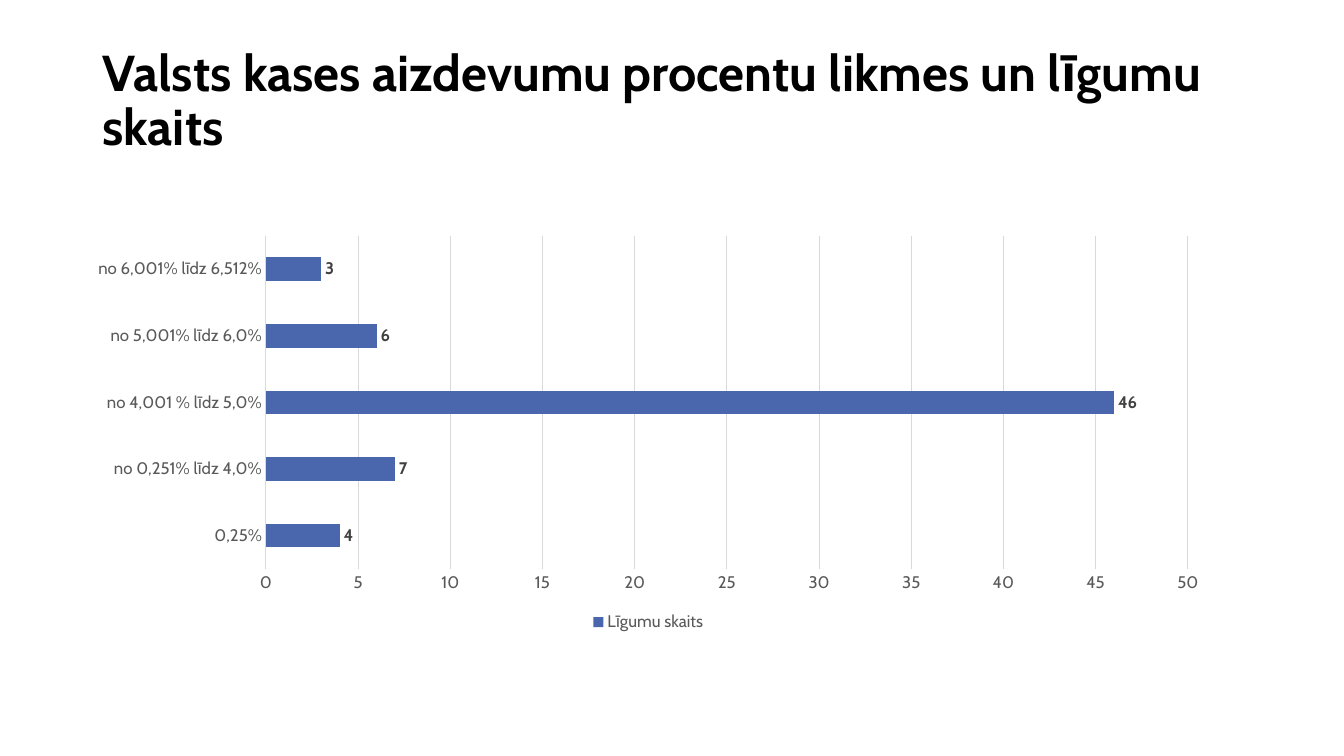
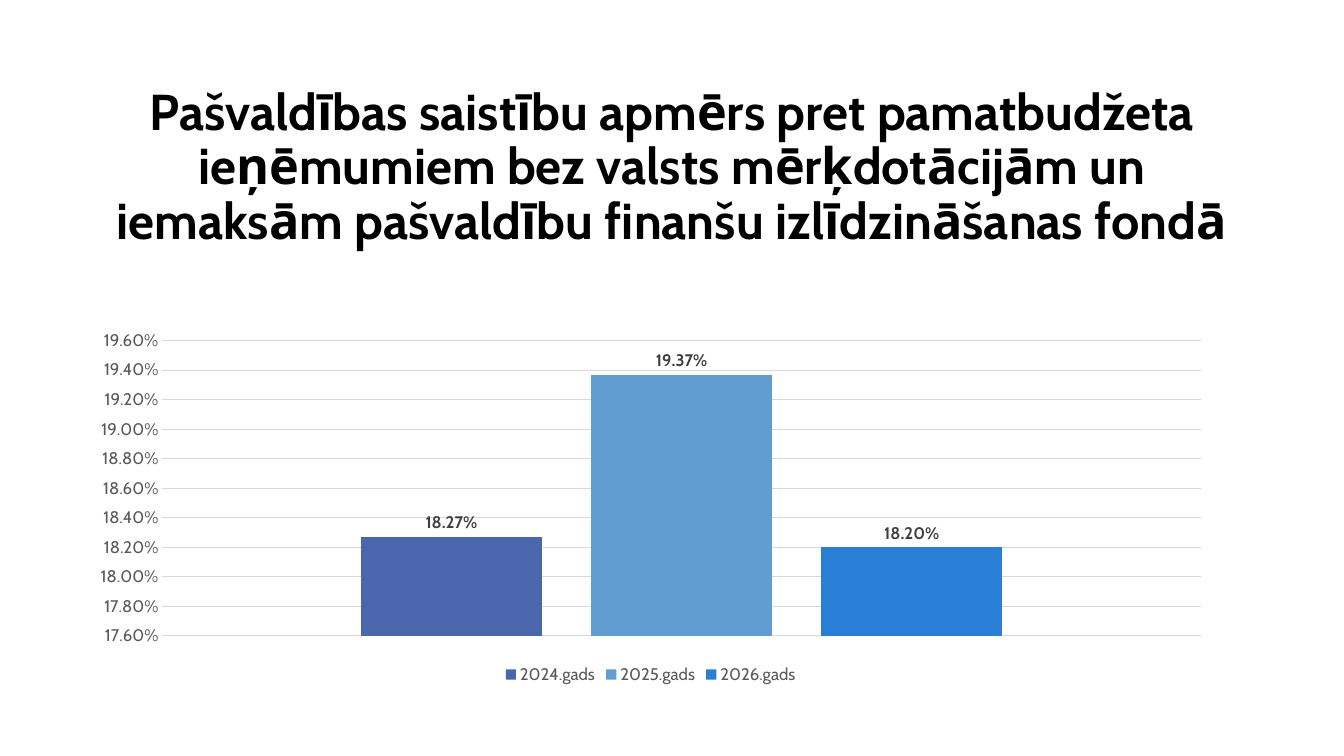
from pptx import Presentation
from pptx import util as u
from pptx.chart.data import CategoryChartData
from pptx.dml.color import RGBColor
from pptx.enum import chart as ch, text

FACE = "Cabin"
HUES = {"title": "000000", "axis": "595959", "label": "404040", "grid": "D9D9D9"}
BARS = ["4A66AC", "629DD1", "297FD5"]

PAGES = [
    {
        "title": "Valsts kases aizdevumu procentu likmes un līgumu skaits",
        "align": text.PP_ALIGN.LEFT,
        "tall": 3.12,
        "kind": ch.XL_CHART_TYPE.BAR_CLUSTERED,
        "box": (1.9, 5.74, 28.88, 10.29),
        "cats": ["0,25%", "no 0,251% līdz 4,0%", "no 4,001 % līdz 5,0%",
                 "no 5,001% līdz 6,0%", "no 6,001% līdz 6,512%"],
        "rows": {"Līgumu skaits": [4, 7, 46, 6, 3]},
        "gap": 182, "lap": 0, "form": "General",
        "scale": (0, 50, 5), "names": True,
    },
    {
        "title": "Pašvaldības saistību apmērs pret pamatbudžeta ieņēmumiem bez "
                 "valsts mērķdotācijām un iemaksām pašvaldību finanšu "
                 "izlīdzināšanas fondā",
        "align": text.PP_ALIGN.CENTER,
        "tall": 6.48,
        "kind": ch.XL_CHART_TYPE.COLUMN_CLUSTERED,
        "box": (1.96, 8.15, 28.88, 9.2),
        "cats": ["1"],
        "rows": {"2024.gads": [0.1827], "2025.gads": [0.1937], "2026.gads": [0.182]},
        "gap": 219, "lap": -27, "form": "0.00%",
        "scale": (0.176, 0.196, 0.002), "names": False,
    },
]


def style(font, size, hue, bold=False):
    font.name, font.size, font.bold = FACE, u.Pt(size), bold
    font.color.rgb = RGBColor.from_string(HUES[hue])


def rule(line):
    """Thin grey line, shared by the grid and the category axis."""
    line.width = u.Pt(0.75)
    line.color.rgb = RGBColor.from_string(HUES["grid"])


deck = Presentation()
deck.slide_width, deck.slide_height = u.Cm(33.87), u.Cm(19.05)

for page in PAGES:
    slide = deck.slides.add_slide(deck.slide_layouts[6])

    # Title
    box = slide.shapes.add_textbox(u.Cm(2.33), u.Cm(1.01), u.Cm(29.21), u.Cm(page["tall"]))
    frame = box.text_frame
    frame.word_wrap = True
    frame.vertical_anchor = text.MSO_ANCHOR.MIDDLE
    frame.text = page["title"]
    para = frame.paragraphs[0]
    para.alignment, para.line_spacing = page["align"], 0.9
    style(para.runs[0].font, 36, "title", True)

    # Chart
    data = CategoryChartData(number_format=page["form"])
    data.categories = page["cats"]
    for name, vals in page["rows"].items():
        data.add_series(name, vals)
    chart = slide.shapes.add_chart(page["kind"], *map(u.Cm, page["box"]), data).chart
    style(chart.font, 10, "title")
    chart.has_title = False
    chart.has_legend = True
    chart.legend.position = ch.XL_LEGEND_POSITION.BOTTOM
    chart.legend.include_in_layout = False
    style(chart.legend.font, 12, "axis")

    # Axes
    cat, val = chart.category_axis, chart.value_axis
    for axis in (cat, val):
        axis.major_tick_mark = axis.minor_tick_mark = ch.XL_TICK_MARK.NONE
        style(axis.tick_labels.font, 12, "axis")
    cat.has_major_gridlines = False
    cat.visible = page["names"]
    rule(cat.format.line)
    val.has_major_gridlines = True
    rule(val.major_gridlines.format.line)
    val.format.line.fill.background()
    val.minimum_scale, val.maximum_scale, val.major_unit = page["scale"]
    val.tick_labels.number_format = page["form"]
    val.tick_labels.number_format_is_linked = False

    # Bars and their labels
    plot = chart.plots[0]
    plot.gap_width, plot.overlap = page["gap"], page["lap"]
    plot.vary_by_categories = False
    for row, hue in zip(plot.series, BARS):
        row.invert_if_negative = False
        row.format.fill.solid()
        row.format.fill.fore_color.rgb = RGBColor.from_string(hue)
        tags = row.data_labels
        tags.show_value = True
        tags.position = ch.XL_LABEL_POSITION.OUTSIDE_END
        tags.number_format, tags.number_format_is_linked = page["form"], False
        style(tags.font, 12, "label", True)

deck.save("out.pptx")
